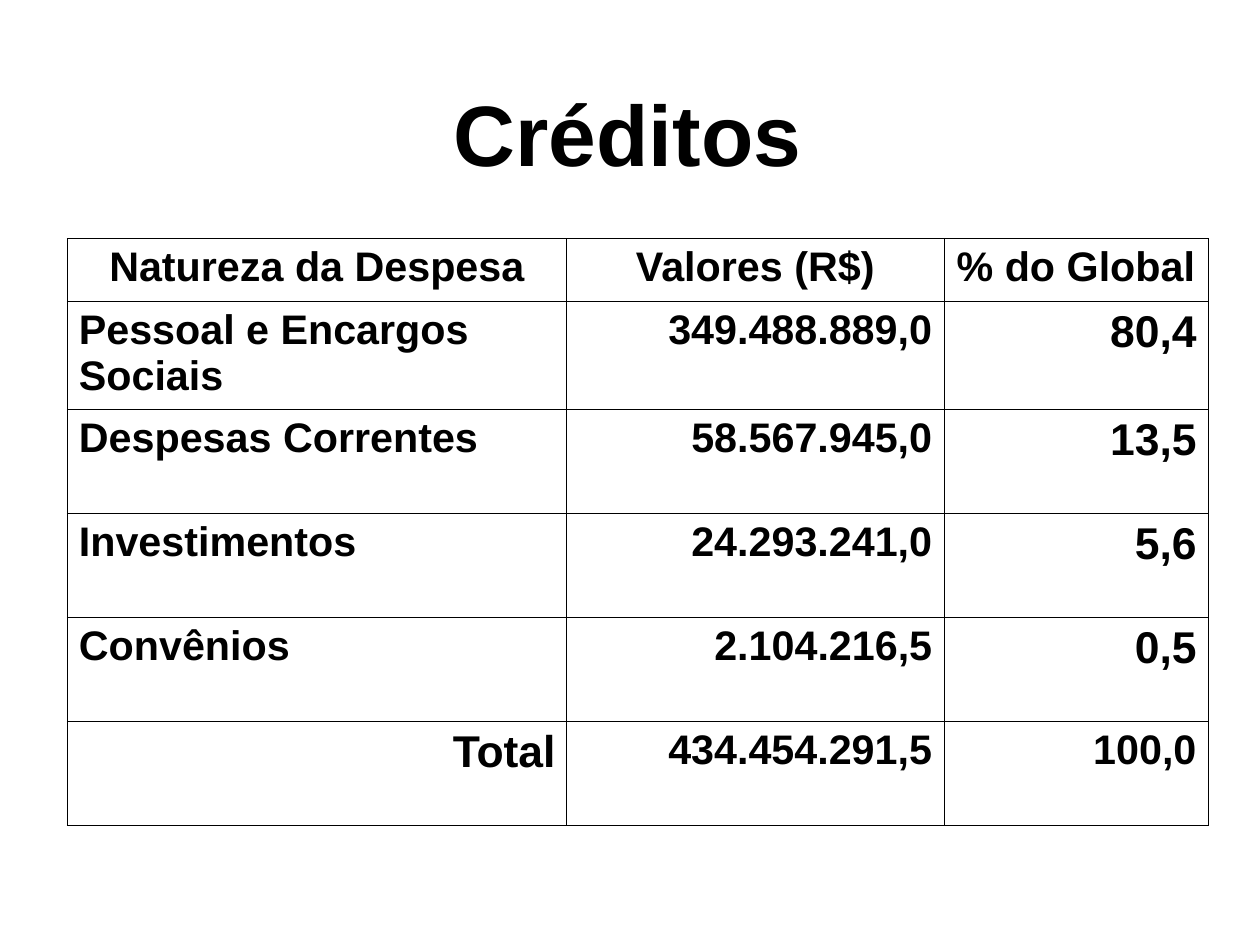
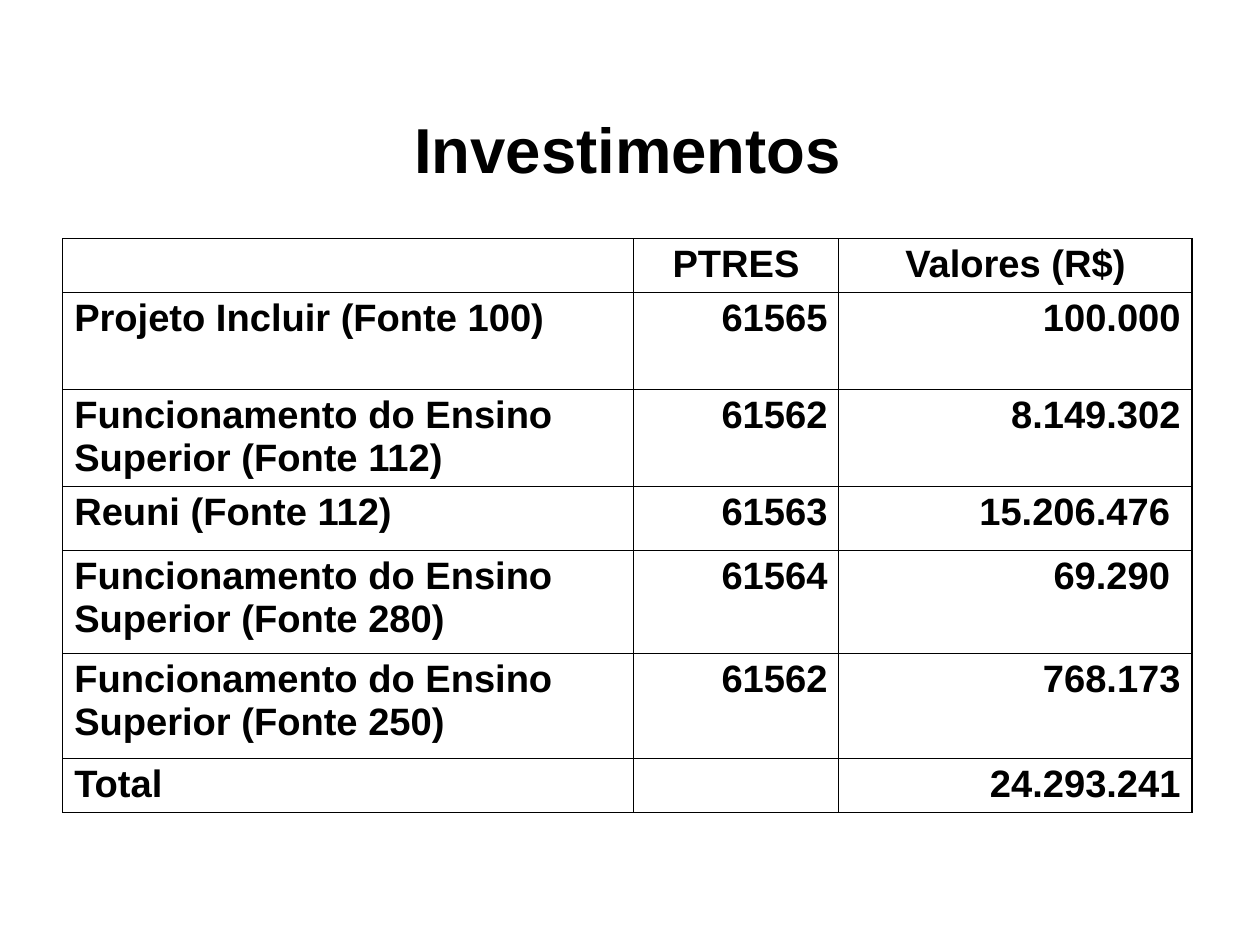
"""Build two budget slides, each a title over a ruled table."""
from pptx import Presentation
from pptx.dml.color import RGBColor as Rgb
from pptx.enum.text import MSO_ANCHOR as Anchor, PP_ALIGN as Align
from pptx.oxml import parse_xml
from pptx.oxml.ns import nsdecls
from pptx.util import Emu, Inches, Pt

INK = {"text": "000000", "rule": "000000", "back": "FFFFFF"}
FONT = {"name": "Arial", "bold": True}
FRAME = {"margin_left": 0, "margin_right": 0, "margin_top": 0,
         "margin_bottom": 0, "word_wrap": True,
         "vertical_anchor": Anchor.MIDDLE}
PLAIN = {"first_row": False, "horz_banding": False}
SIDES = ("lnL", "lnR", "lnT", "lnB")

DECK = [
    {"title": "Créditos", "top": 0.47, "high": 1.38, "head": 54,
     "left": 0.59, "size": 26, "pad": 0.05,
     "cols": [4.37, 3.3, 2.31],
     "rows": [0.55, 0.94] + [0.91] * 4,
     "large": {(1, 2), (2, 2), (3, 2), (4, 2), (5, 0)},
     "total": Align.RIGHT,
     "data": [
         ("Natureza da Despesa", "Valores (R$)", "% do Global"),
         ("Pessoal e Encargos Sociais", "349.488.889,0", "80,4"),
         ("Despesas Correntes", "58.567.945,0", "13,5"),
         ("Investimentos", "24.293.241,0", "5,6"),
         ("Convênios", "2.104.216,5", "0,5"),
         ("Total", "434.454.291,5", "100,0")]},
    {"title": "Investimentos", "top": 0.82, "high": 0.95, "head": 40,
     "left": 0.55, "size": 24, "pad": 0.04,
     "cols": [4.99, 1.8, 3.09],
     "rows": [0.47, 0.85, 0.85, 0.56, 0.9, 0.92, 0.47],
     "large": set(),
     "total": Align.LEFT,
     "data": [
         ("", "PTRES", "Valores (R$)"),
         ("Projeto Incluir (Fonte 100)", "61565", "100.000"),
         ("Funcionamento do Ensino Superior (Fonte 112)", "61562", "8.149.302"),
         ("Reuni (Fonte 112)", "61563", "15.206.476 "),
         ("Funcionamento do Ensino Superior (Fonte 280)", "61564", "69.290 "),
         ("Funcionamento do Ensino Superior (Fonte 250)", "61562", "768.173"),
         ("Total", "", "24.293.241")]},
]


def style(obj, form):
    for key, val in form.items():
        setattr(obj, key, val)


def write(para, text, size, align):
    para.text = text
    para.alignment = align
    style(para.font, FONT | {"size": Pt(size)})
    para.font.color.rgb = Rgb.from_string(INK["text"])


deck = Presentation()
style(deck, {"slide_width": Emu(10080625), "slide_height": Emu(7559675)})

for page in DECK:
    slide = deck.slides.add_slide(deck.slide_layouts[6])
    fill = slide.background.fill
    fill.solid()
    fill.fore_color.rgb = Rgb.from_string(INK["back"])

    box = slide.shapes.add_textbox(Inches(0.53), Inches(page["top"]),
                                   Inches(9.92), Inches(page["high"]))
    style(box.text_frame, FRAME)
    write(box.text_frame.paragraphs[0], page["title"], page["head"],
          Align.CENTER)

    cols, rows, data = page["cols"], page["rows"], page["data"]
    grid = slide.shapes.add_table(
        len(rows), len(cols), Inches(page["left"]), Inches(2.09),
        Inches(sum(cols)), Inches(sum(rows))).table
    style(grid, PLAIN)
    for col, wide in zip(grid.columns, cols):
        col.width = Inches(wide)
    for row, high in zip(grid.rows, rows):
        row.height = Inches(high)

    pads = {"margin_top": Inches(page["pad"]), "margin_bottom": Inches(0.01)}
    last = len(data) - 1
    for r, line in enumerate(data):
        for c, text in enumerate(line):
            cell = grid.cell(r, c)
            style(cell, pads)
            if r == 0:
                align = Align.CENTER
            elif c > 0:
                align = Align.RIGHT
            else:
                align = page["total"] if r == last else Align.LEFT
            size = 28 if (r, c) in page["large"] else page["size"]
            write(cell.text_frame.paragraphs[0], text, size, align)
            props = cell._tc.get_or_add_tcPr()
            for side in SIDES:
                props.append(parse_xml(
                    f'<a:{side} {nsdecls("a")} w="{Pt(0.75)}"><a:solidFill>'
                    f'<a:srgbClr val="{INK["rule"]}"/></a:solidFill></a:{side}>'))
            cell.fill.background()

deck.save("out.pptx")
